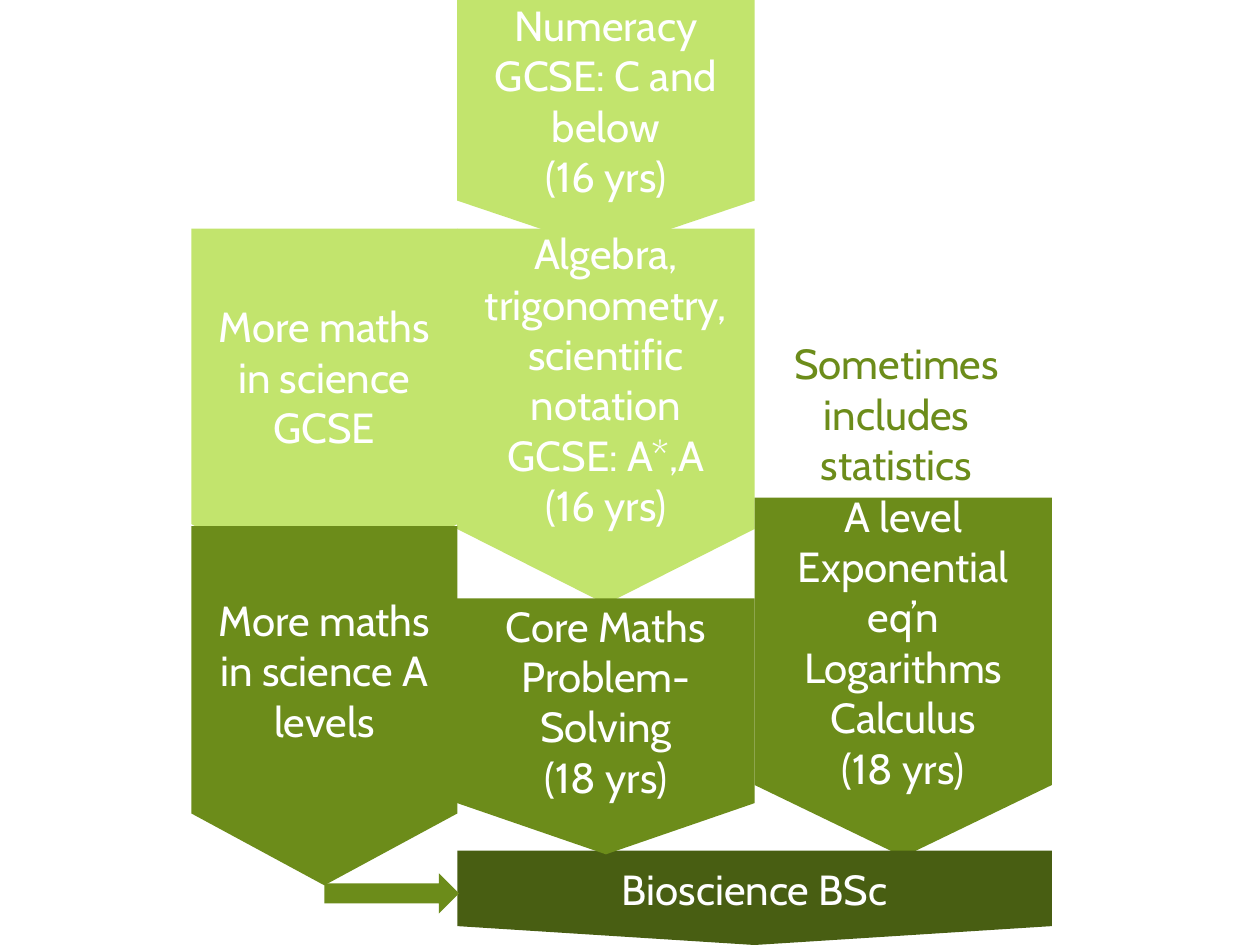
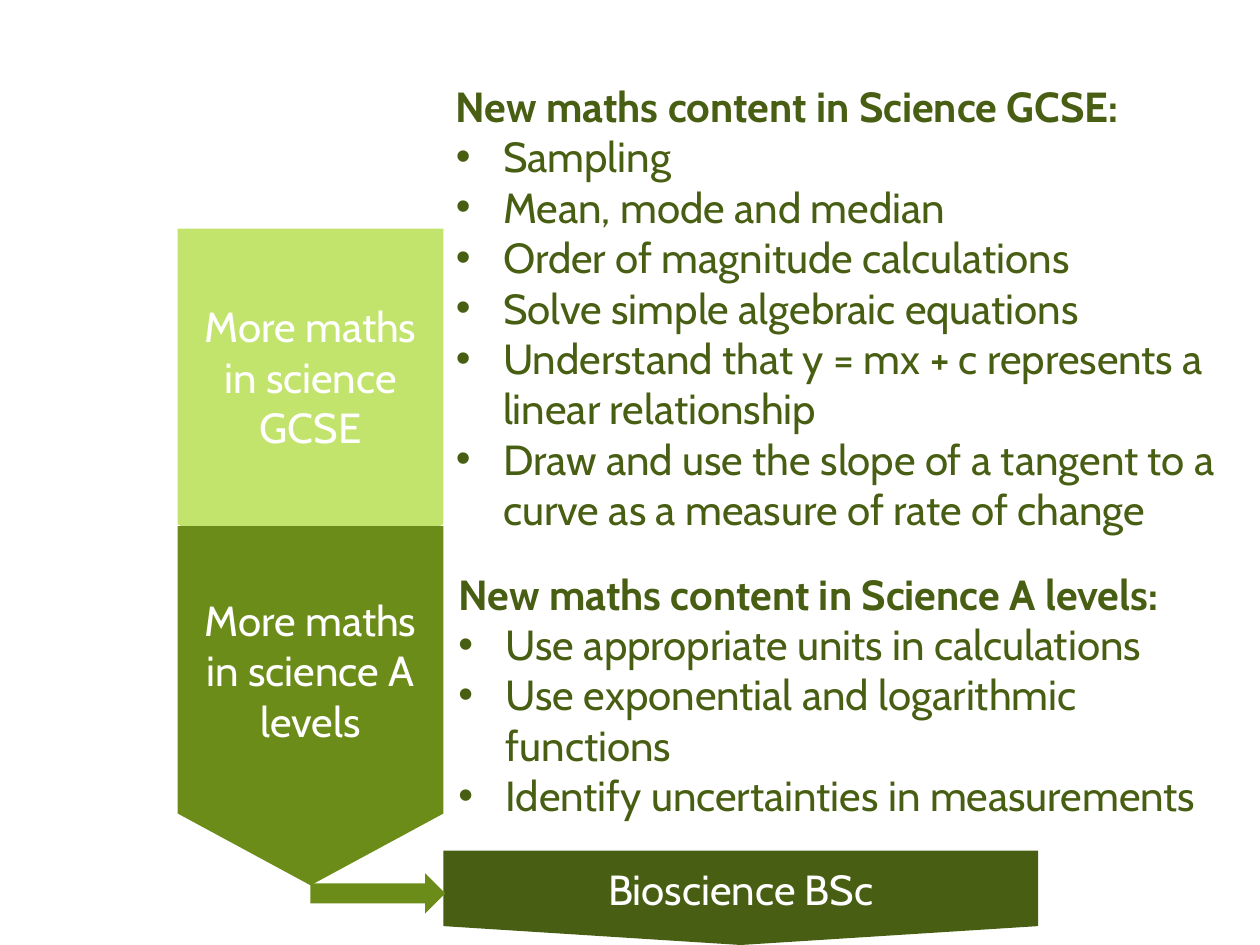
"""Build two slides on the maths routes into a bioscience degree."""
import pptx
import pptx.dml.color
import pptx.enum.shapes
import pptx.enum.text
import pptx.util
from lxml import etree

Pt = pptx.util.Pt
RGB = pptx.dml.color.RGBColor
SHAPE = pptx.enum.shapes.MSO_SHAPE
ALIGN = pptx.enum.text.PP_ALIGN
ANCHOR = pptx.enum.text.MSO_ANCHOR

LIME = RGB(0xC2, 0xE4, 0x6D)
GREEN = RGB(0x6C, 0x8C, 0x1A)
DARK = RGB(0x48, 0x5E, 0x12)
WHITE = RGB(0xFF, 0xFF, 0xFF)
FONT, SIZE = "Cabin", 24
INDENT = 27

SCIENCE_WIDTH, MATHS_WIDTH = 151.9, 169.9
COLUMNS = {
    "science": (0, SCIENCE_WIDTH),
    "maths": (SCIENCE_WIDTH, MATHS_WIDTH),
    "a level": (SCIENCE_WIDTH + MATHS_WIDTH, MATHS_WIDTH),
    "degree": (SCIENCE_WIDTH, 2 * MATHS_WIDTH),
}

DEGREE = ("degree", 486, 54, DARK, ["Bioscience BSc"])
SCIENCE_STAGES = [
    ("science", 130.7, 211, LIME, ["More maths in science GCSE"]),
    ("science", 300.7, 205.2, GREEN, ["More maths in science A levels"]),
]
MATHS_STAGES = [
    ("maths", 0, 143.3, LIME, ["Numeracy", "GCSE: C and below", "(16 yrs)"]),
    ("maths", 130.7, 214.5, LIME,
     ["Algebra, trigonometry, scientific notation", "GCSE: A*,A", "(16 yrs)"]),
    ("a level", 284.4, 205.2, GREEN,
     ["A level", "Exponential eq’n", "Logarithms", "Calculus", "(18 yrs)"]),
    DEGREE,
    ("maths", 342, 146.2, GREEN, ["Core Maths Problem-Solving", "(18 yrs)"]),
]
STATISTICS = "Sometimes includes statistics"
NEW_CONTENT = [
    ((253.4, 42.5, 466.6, 269.3), "New maths content in Science GCSE:", [
        "Sampling",
        "Mean, mode and median",
        "Order of magnitude calculations",
        "Solve simple algebraic equations",
        "Understand that y = mx + c represents a linear relationship",
        "Draw and use the slope of a tangent to a curve as a measure of rate of change",
    ]),
    ((254.9, 321.1, 465.1, 123.8), "New maths content in Science A levels:", [
        "Use appropriate units in calculations",
        "Use exponential and logarithmic functions",
        "Identify uncertainties in measurements",
    ]),
]


def write(frame, text, first=False, color=WHITE, bold=False, align=ALIGN.CENTER, bullet=False):
    """Add one formatted paragraph to a text frame."""
    paragraph = frame.paragraphs[0] if first else frame.add_paragraph()
    paragraph.alignment = align
    run = paragraph.add_run()
    run.text = text
    run.font.name, run.font.size, run.font.bold = FONT, Pt(SIZE), bold
    run.font.color.rgb = color
    if bullet:
        properties = paragraph._p.get_or_add_pPr()
        properties.set("marL", str(Pt(INDENT)))
        properties.set("indent", str(-Pt(INDENT)))
        namespace = properties.nsmap["a"]
        etree.SubElement(properties, f"{{{namespace}}}buFont", typeface="Arial")
        etree.SubElement(properties, f"{{{namespace}}}buChar", char="•")


def add_block(slide, preset, place, fill, lines=(), color=WHITE, anchor=ANCHOR.MIDDLE):
    """Draw a flat filled shape with centred lines of text."""
    block = slide.shapes.add_shape(preset, *map(Pt, place))
    block.shadow.inherit = False
    block.fill.solid()
    block.fill.fore_color.rgb = fill
    block.line.fill.background()
    block.text_frame.word_wrap = True
    block.text_frame.vertical_anchor = anchor
    for index, line in enumerate(lines):
        write(block.text_frame, line, first=index == 0, color=color)


def add_route(slide, left, stages):
    """Draw the stages in their columns, then the arrow from science to the degree."""
    for column, top, height, fill, lines in stages:
        offset, width = COLUMNS[column]
        add_block(slide, SHAPE.FLOWCHART_OFFPAGE_CONNECTOR,
                  (left + offset, top, width, height), fill, lines)
    add_block(slide, SHAPE.RIGHT_ARROW, (left + SCIENCE_WIDTH / 2, 499, 77, 23), GREEN)


def add_new_content(slide, place, heading, topics):
    """Write a bold heading with its bulleted topics."""
    frame = slide.shapes.add_textbox(*map(Pt, place)).text_frame
    frame.word_wrap = True
    write(frame, heading, first=True, color=DARK, bold=True, align=ALIGN.LEFT)
    for topic in topics:
        write(frame, topic, color=DARK, align=ALIGN.LEFT, bullet=True)


def main():
    """Build and save the presentation."""
    deck = pptx.Presentation()
    deck.slide_width, deck.slide_height = Pt(720), Pt(540)
    blank = deck.slide_layouts[6]

    routes = deck.slides.add_slide(blank)
    add_block(routes, SHAPE.RECTANGLE, (431.3, 189.4, 162, 94.5), WHITE,
              [STATISTICS], color=GREEN, anchor=ANCHOR.TOP)
    add_route(routes, 109.4, MATHS_STAGES + SCIENCE_STAGES)

    science = deck.slides.add_slide(blank)
    add_route(science, 101.5, [DEGREE] + SCIENCE_STAGES)
    for place, heading, topics in NEW_CONTENT:
        add_new_content(science, place, heading, topics)

    deck.save("out.pptx")


if __name__ == "__main__":
    main()
